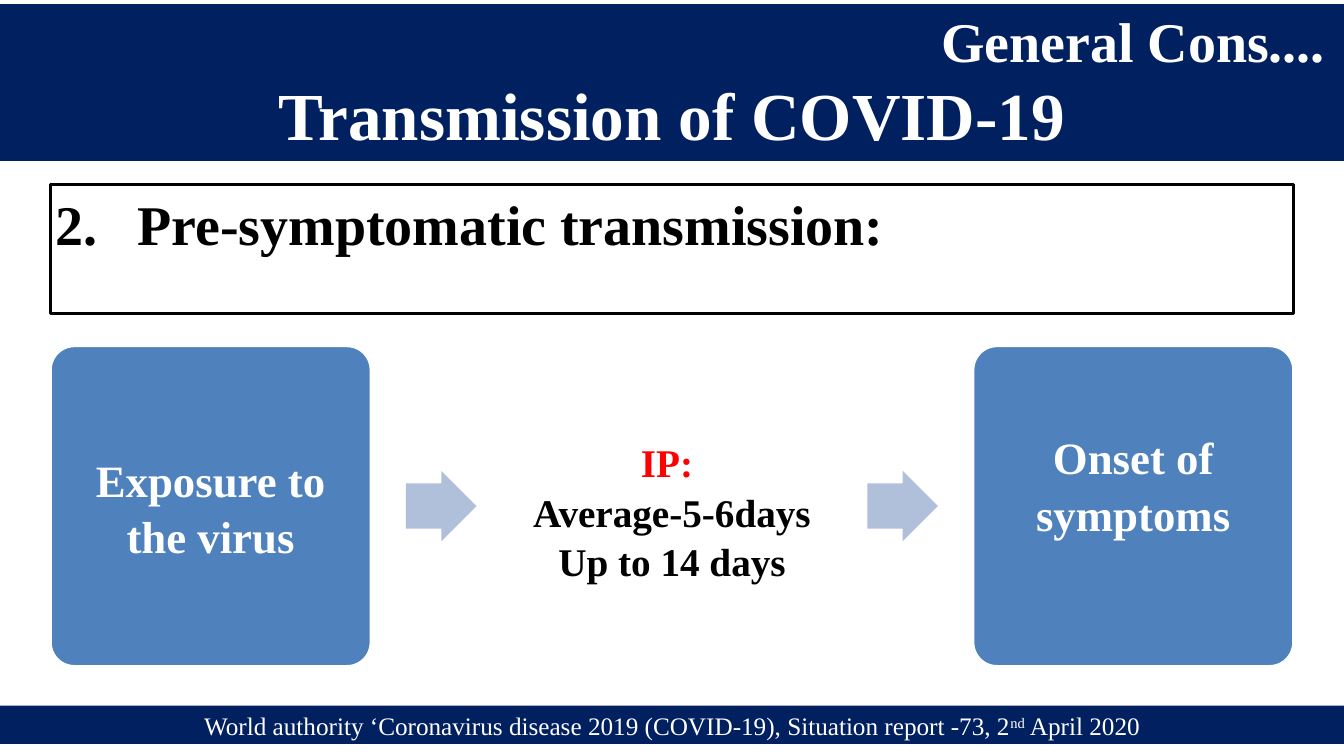
from dataclasses import dataclass
from lxml.etree import SubElement
from pptx import Presentation
from pptx.dml.color import RGBColor
from pptx.enum.shapes import MSO_SHAPE
from pptx.enum.text import MSO_ANCHOR, PP_ALIGN
from pptx.oxml.ns import qn
from pptx.util import Pt


@dataclass(frozen=True)
class Theme:
    font: str = "Times New Roman"
    navy: str = "002060"
    blue: str = "4F81BD"
    pale: str = "B1C0DA"
    white: str = "FFFFFF"
    black: str = "000000"
    red: str = "FF0000"
    title: int = 48
    head: int = 40
    card: int = 32
    period: int = 28
    source: int = 18


class Deck:
    def __init__(self, theme):
        self.theme = theme
        self.show = Presentation()
        self.show.slide_width, self.show.slide_height = Pt(960), Pt(540)
        self.slide = self.show.slides.add_slide(self.show.slide_layouts[6])

    def shape(self, kind, box, fill=None, line=None, width=2, adjust=()):
        shape = self.slide.shapes.add_shape(kind, *map(Pt, box))
        shape.shadow.inherit = False
        for i, value in enumerate(adjust):
            shape.adjustments[i] = value
        if fill:
            shape.fill.solid()
            shape.fill.fore_color.rgb = RGBColor.from_string(fill)
        else:
            shape.fill.background()
        if line:
            shape.line.color.rgb = RGBColor.from_string(line)
            shape.line.width = Pt(width)
        else:
            shape.line.fill.background()
        return shape

    def label(self, box):
        return self.slide.shapes.add_textbox(*map(Pt, box))

    def text(self, shape, lines, anchor=MSO_ANCHOR.MIDDLE,
             align=PP_ALIGN.CENTER, bold=True, spacing=None):
        """Fill the shape with (text, size, colour) lines; return the paragraphs."""
        frame = shape.text_frame
        frame.word_wrap = True
        frame.vertical_anchor = anchor
        frame.margin_left = frame.margin_right = Pt(3.6)
        frame.margin_top = frame.margin_bottom = Pt(3.6)
        for i, (words, size, color) in enumerate(lines):
            par = frame.add_paragraph() if i else frame.paragraphs[0]
            par.alignment = align
            par.line_spacing = spacing
            par.font.name, par.font.size = self.theme.font, Pt(size)
            par.font.bold = bold
            par.font.color.rgb = RGBColor.from_string(color)
            par.add_run().text = words
        return frame.paragraphs

    def number(self, par, start, indent):
        """Number the paragraph from start, with a hanging indent."""
        props = par._p.get_or_add_pPr()
        props.set("marL", str(Pt(indent)))
        props.set("indent", str(Pt(-indent)))
        mark = SubElement(props, qn("a:buAutoNum"),
                          type="arabicPeriod", startAt=str(start))
        default = props.find(qn("a:defRPr"))
        if default is not None:
            default.addprevious(mark)

    def raised(self, par, words):
        run = par.add_run()
        run.text = words
        run._r.get_or_add_rPr().set("baseline", "30000")


def main():
    theme = Theme()
    deck = Deck(theme)
    rect = MSO_SHAPE.RECTANGLE

    banner = deck.shape(rect, (0, 4.3, 960, 109.5), theme.navy, theme.navy, 2.25)
    pars = deck.text(banner, [
        ("General Cons.... ", theme.head, theme.white),
        ("Transmission of COVID-19", theme.title, theme.white),
    ], MSO_ANCHOR.BOTTOM)
    pars[0].alignment = PP_ALIGN.RIGHT

    topic = deck.shape(rect, (36, 131.8, 888, 92.2), theme.white, theme.black)
    pars = deck.text(topic, [
        ("Pre-symptomatic transmission: ", theme.head, theme.black),
    ], MSO_ANCHOR.TOP, PP_ALIGN.JUSTIFY)
    pars[0].space_before = Pt(4)
    deck.number(pars[0], 2, 58.5)

    stages = [
        (theme.blue, 321.8, 80,
         [("Exposure to the virus", theme.card, theme.white)]),
        (None, 310.3, 108.7,
         [("IP: ", theme.period, theme.red),
          ("Average-5-6days", theme.period, theme.black),
          ("Up to 14 days", theme.period, theme.black)]),
        (theme.blue, 303, 85,
         [("Onset of symptoms", theme.card, theme.white)]),
    ]
    side, pitch = 229, 329.5
    for i, (fill, top, height, lines) in enumerate(stages):
        left = 36 + i * pitch
        deck.shape(MSO_SHAPE.ROUNDED_RECTANGLE, (left, 247, side, side),
                   fill, theme.white, adjust=[0.075])
        deck.text(deck.label((left + 5, top, side - 10, height)),
                  lines, spacing=1.05)
        if i < len(stages) - 1:
            deck.shape(MSO_SHAPE.RIGHT_ARROW, (left + 254, 336.3, 50.4, 50.4),
                       theme.pale, adjust=[0.64, 0.5])

    footer = deck.shape(rect, (0, 504, 960, 27.4), theme.navy)
    source = deck.text(footer, [
        ("World authority ‘Coronavirus disease 2019 (COVID-19), "
         "Situation report -73, 2", theme.source, theme.white),
    ], MSO_ANCHOR.TOP, bold=False)[0]
    deck.raised(source, "nd")
    source.add_run().text = " April 2020"

    deck.show.save("out.pptx")


if __name__ == "__main__":
    main()
